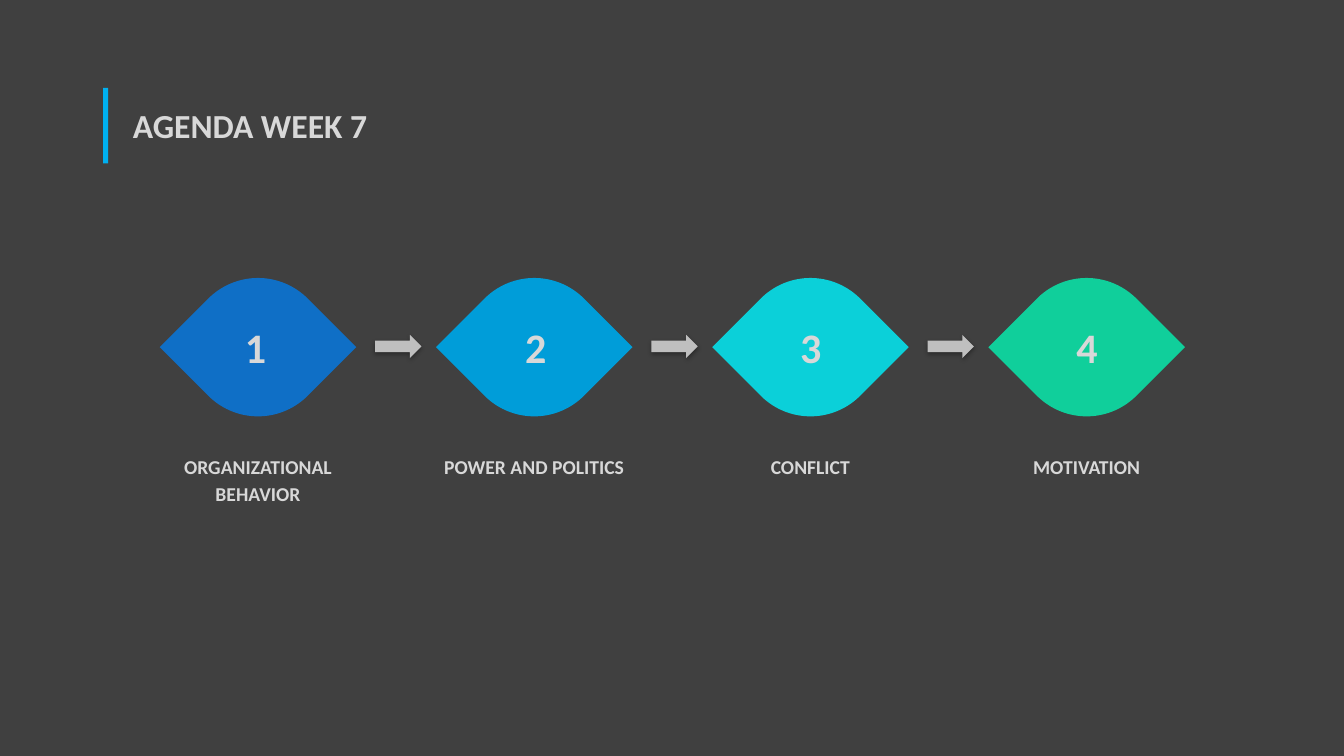
from lxml.etree import Element
from lxml.etree import SubElement
from pptx import Presentation
from pptx.dml.color import RGBColor
from pptx.enum.shapes import MSO_SHAPE
from pptx.enum.text import PP_ALIGN
from pptx.oxml.ns import qn
from pptx.util import Pt

BACKGROUND = RGBColor(0x40, 0x40, 0x40)
TEXT = RGBColor(0xD8, 0xD8, 0xD8)
ACCENT = RGBColor(0x00, 0xB0, 0xF0)
ARROW = RGBColor(0xBF, 0xBF, 0xBF)
BLUE = RGBColor(0x0F, 0x6F, 0xC6)
SKY = RGBColor(0x00, 0x9D, 0xD9)
CYAN = RGBColor(0x0B, 0xD0, 0xD9)
GREEN = RGBColor(0x10, 0xCF, 0x9B)

TOPICS = [
    (["ORGANIZATIONAL", "BEHAVIOR"], BLUE, 167.8),
    (["POWER AND POLITICS"], SKY, 368.1),
    (["CONFLICT"], CYAN, 564.5),
    (["MOTIVATION"], GREEN, 761.8),
]
FIRST_CENTER, STEP, MIDDLE = 184.3, 197.3, 248


def add_text(frame, lines, size=14, color=TEXT, align=PP_ALIGN.LEFT, font="Calibri", gap=2.4):
    """Fill a text frame with one bold paragraph per line."""
    for index, line in enumerate(lines):
        para = frame.add_paragraph() if index else frame.paragraphs[0]
        para.alignment = align
        if index:
            para.space_before = Pt(gap)
        span = para.add_run()
        span.text = line
        span.font.name = font
        span.font.size = Pt(size)
        span.font.bold = True
        span.font.color.rgb = color


class AgendaSlide:
    """Draw the agenda elements on one page."""

    def __init__(self, page):
        """Keep the page and paint its background."""
        self.page = page
        page.background.fill.solid()
        page.background.fill.fore_color.rgb = BACKGROUND

    def paint(self, shape, color):
        """Give a shape a flat fill without line or shadow."""
        shape.shadow.inherit = False
        shape.fill.solid()
        shape.fill.fore_color.rgb = color
        shape.line.fill.background()

    def text(self, left, top, width, height, lines, **style):
        """Add a wrapped text box."""
        box = self.page.shapes.add_textbox(Pt(left), Pt(top), Pt(width), Pt(height))
        box.text_frame.word_wrap = True
        add_text(box.text_frame, lines, **style)

    def bar(self, left, top, width, height):
        """Add the accent bar beside the title."""
        bar = self.page.shapes.add_shape(
            MSO_SHAPE.RECTANGLE, Pt(left), Pt(top), Pt(width), Pt(height))
        self.paint(bar, ACCENT)

    def arrow(self, left, top, width, height):
        """Add a right arrow with a soft shadow below it."""
        arrow = self.page.shapes.add_shape(
            MSO_SHAPE.RIGHT_ARROW, Pt(left), Pt(top), Pt(width), Pt(height))
        self.paint(arrow, ARROW)
        effects = arrow._element.spPr.find(qn("a:effectLst"))
        shadow = SubElement(effects, qn("a:outerShdw"), blurRad=str(Pt(3.1)),
                            dist=str(Pt(1.8)), dir="5400000", rotWithShape="0")
        tint = SubElement(shadow, qn("a:srgbClr"), val="000000")
        SubElement(tint, qn("a:alpha"), val="33000")

    def eye(self, center, middle, color):
        """Add a pointed oval whose top and bottom are cubic curves."""
        upper = [(-70.2, 0), (-34.5, -35.7), (-15, -54), (15, -54), (34.5, -35.7)]
        outline = upper + [(-x, -y) for x, y in upper]
        points = [(Pt(center + x), Pt(middle + y)) for x, y in outline]
        builder = self.page.shapes.build_freeform(*points[0])
        builder.add_line_segments(points[1:], close=True)
        shape = builder.convert_to_shape()
        segments = list(shape._element.iter(qn("a:lnTo")))
        for first in (1, 6):
            curve = Element(qn("a:cubicBezTo"))
            segments[first].addprevious(curve)
            for segment in segments[first:first + 3]:
                curve.append(segment[0])
                segment.getparent().remove(segment)
        self.paint(shape, color)


def main():
    """Build and save the agenda deck."""
    deck = Presentation()
    deck.slide_width, deck.slide_height = Pt(960), Pt(540)
    agenda = AgendaSlide(deck.slides.add_slide(deck.slide_layouts[6]))
    agenda.bar(73.6, 62.8, 3.6, 54)
    agenda.text(87.8, 71.3, 293.8, 36, ["AGENDA WEEK 7"], size=24)
    for index, (lines, color, number_left) in enumerate(TOPICS):
        center = FIRST_CENTER + index * STEP
        agenda.eye(center, MIDDLE, color)
        if index < len(TOPICS) - 1:
            agenda.arrow(center + 83.7, 239.2, 33.1, 16.6)
        agenda.text(center - 83, 321.5, 166, 24.5 + 19.5 * (len(lines) - 1), lines,
                    align=PP_ALIGN.CENTER)
        agenda.text(number_left, 225.8, 33.1, 43.9, [str(index + 1)], size=30)
    deck.save("out.pptx")


if __name__ == "__main__":
    main()
